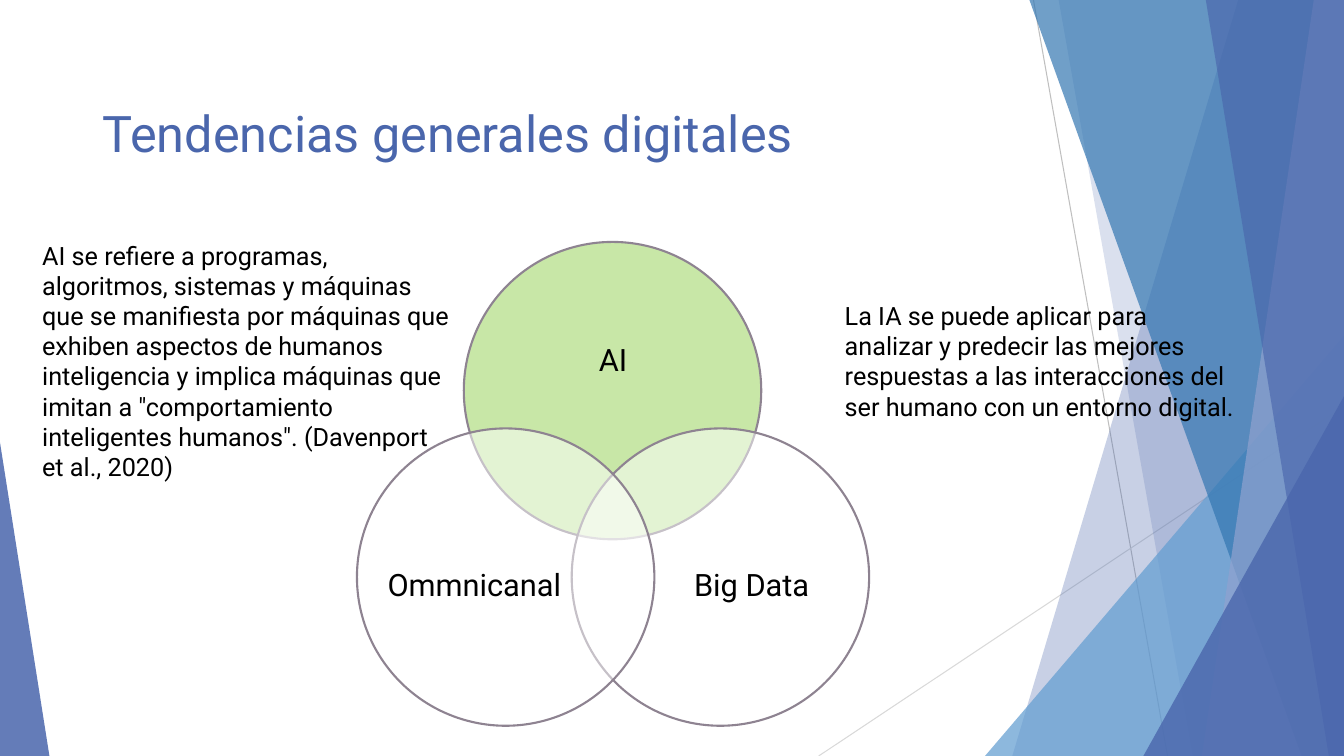
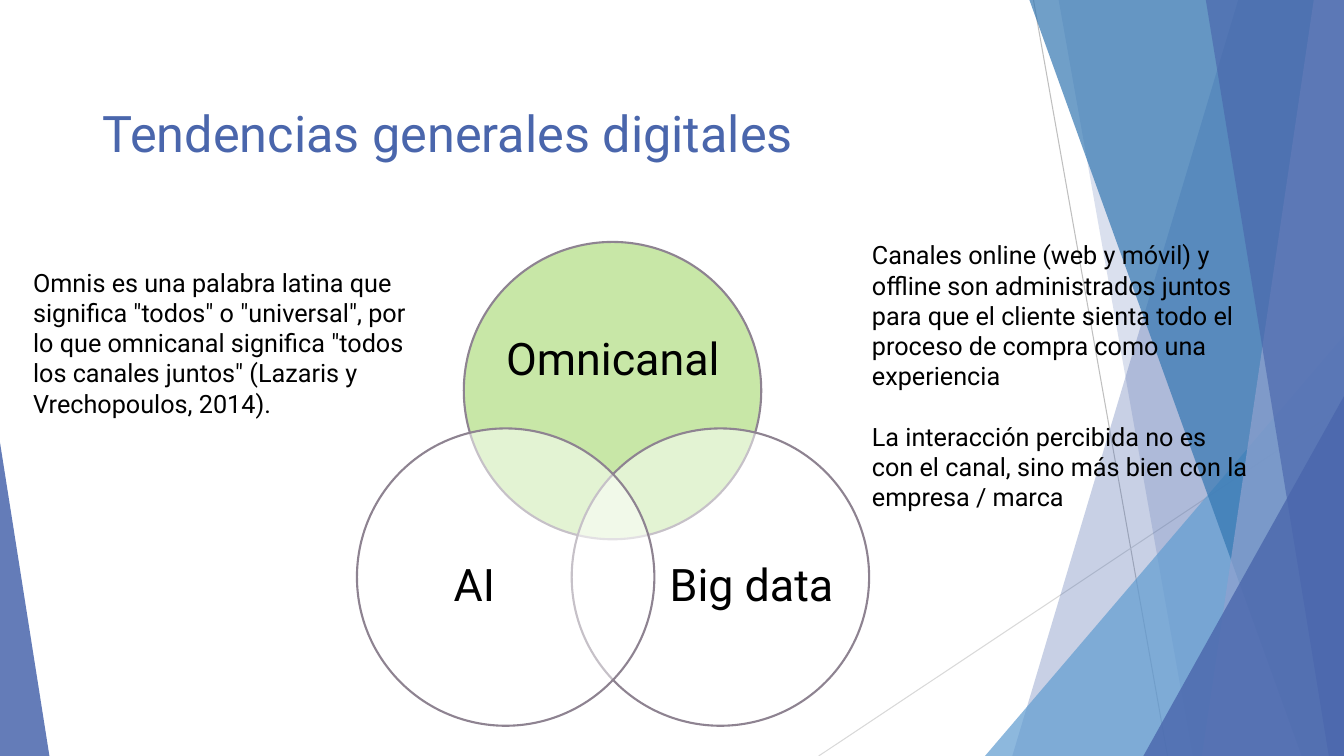
from pptx import Presentation
from pptx.dml.color import RGBColor
from pptx.enum.shapes import MSO_CONNECTOR, MSO_SHAPE
from pptx.enum.text import MSO_ANCHOR, PP_ALIGN
from pptx.oxml.ns import qn
from pptx.util import Inches, Pt
from lxml.etree import SubElement

WIDTH, HEIGHT = 13.33, 7.5
FONT = "Roboto"
TITLE = "Tendencias generales digitales"
BLACK = RGBColor(0x00, 0x00, 0x00)
WHITE = RGBColor(0xFF, 0xFF, 0xFF)
INDIGO = RGBColor(0x4A, 0x66, 0xAC)
SKY = RGBColor(0x62, 0x9D, 0xD1)
OCEAN = RGBColor(0x34, 0x77, 0xB2)
LAVENDER = RGBColor(0x90, 0xA2, 0xCF)
GREEN = RGBColor(0x92, 0xD0, 0x50)
MAUVE = RGBColor(0x8E, 0x83, 0x91)
GRAY = RGBColor(0xBF, 0xBF, 0xBF)
LIGHT_GRAY = RGBColor(0xD9, 0xD9, 0xD9)


class Deck:
    """Hold the shared style and the current slide."""

    def __init__(self):
        self.prs = Presentation()
        self.prs.slide_width = Inches(WIDTH)
        self.prs.slide_height = Inches(HEIGHT)
        self.s = None

    def add_slide(self):
        self.s = self.prs.slides.add_slide(self.prs.slide_layouts[6])
        self.backdrop()
        self.text(0.92, 0.96, 10.74, 1.45, [TITLE], 36, INDIGO)

    def paint(self, sp, color, opacity, outline=None):
        sp.shadow.inherit = False
        sp.fill.solid()
        sp.fill.fore_color.rgb = color
        clr = sp.fill._xPr.find(qn("a:solidFill"))[0]
        SubElement(clr, qn("a:alpha")).set("val", str(opacity * 1000))
        if outline is None:
            sp.line.fill.background()
        else:
            sp.line.color.rgb = outline
            sp.line.width = Pt(1.5)

    def line(self, x1, y1, x2, y2, color):
        ends = [Inches(v) for v in (x1, y1, x2, y2)]
        cxn = self.s.shapes.add_connector(MSO_CONNECTOR.STRAIGHT, *ends)
        cxn.line.color.rgb = color
        cxn.line.width = Pt(0.75)
        SubElement(cxn._element.spPr, qn("a:effectLst"))

    def band(self, top_x, bottom_x, color, opacity):
        points = [(top_x, 0), (WIDTH, 0), (WIDTH, HEIGHT), (bottom_x, HEIGHT)]
        points = [(Inches(x), Inches(y)) for x, y in points]
        builder = self.s.shapes.build_freeform(*points[0])
        builder.add_line_segments(points[1:], close=True)
        self.paint(builder.convert_to_shape(), color, opacity)

    def triangle(self, x, y, w, apex, color, opacity):
        sp = self.s.shapes.add_shape(
            MSO_SHAPE.ISOSCELES_TRIANGLE,
            Inches(x), Inches(y), Inches(w), Inches(HEIGHT - y))
        sp.adjustments[0] = apex
        self.paint(sp, color, opacity)

    def backdrop(self):
        self.line(10.25, 0, 11.58, HEIGHT, GRAY)
        self.line(WIDTH, 4.03, 8.12, HEIGHT, LIGHT_GRAY)
        self.band(12.28, 10.04, INDIGO, 30)
        self.band(10.5, 11.83, INDIGO, 20)
        self.triangle(9.77, 3.33, 3.56, 1, SKY, 72)
        self.band(10.21, 12.91, OCEAN, 70)
        self.band(13.03, 11.92, LAVENDER, 70)
        self.band(11.96, 13.18, INDIGO, 65)
        self.triangle(11.34, 3.93, 1.99, 1, INDIGO, 80)
        self.triangle(0, 4.39, 0.49, 0, INDIGO, 85)

    def text(self, x, y, w, h, paragraphs, size=18, color=BLACK):
        box = self.s.shapes.add_textbox(
            Inches(x), Inches(y), Inches(w), Inches(h))
        tf = box.text_frame
        tf.word_wrap = True
        for i, words in enumerate(paragraphs):
            p = tf.add_paragraph() if i else tf.paragraphs[0]
            if i:
                p.space_before = Pt(21.5)
            r = p.add_run()
            r.text = words
            r.font.name = FONT
            r.font.size = Pt(size)
            r.font.color.rgb = color
        return tf

    def label(self, x, y, w, h, words, size):
        tf = self.text(x, y, w, h, [words], size)
        tf.margin_left = tf.margin_right = 0
        tf.margin_top = tf.margin_bottom = 0
        tf.vertical_anchor = MSO_ANCHOR.MIDDLE
        p = tf.paragraphs[0]
        p.alignment = PP_ALIGN.CENTER
        p.line_spacing = 0.9

    def circle(self, x, y, color):
        d = Inches(2.95)
        sp = self.s.shapes.add_shape(
            MSO_SHAPE.OVAL, Inches(x), Inches(y), d, d)
        self.paint(sp, color, 50, MAUVE)

    def venn(self, top, right, left, size):
        self.circle(4.6, 2.4, GREEN)
        self.label(5, 2.92, 2.16, 1.33, top, size)
        for x, label_x, words in ((5.67, 6.57, right), (3.54, 3.82, left)):
            self.circle(x, 4.25, WHITE)
            self.label(label_x, 5.01, 1.77, 1.62, words, size)


def main():
    deck = Deck()

    deck.add_slide()
    deck.venn("AI", "Big Data", "Ommnicanal", 22)
    deck.text(8.28, 2.93, 4.06, 1.31, [
        "La IA se puede aplicar para analizar y predecir las mejores "
        "respuestas a las interacciones del ser humano con un entorno "
        "digital."])
    deck.text(0.32, 2.33, 4.24, 2.52, [
        "AI se refiere a programas, algoritmos, sistemas y máquinas que se "
        "manifiesta por máquinas que exhiben aspectos de humanos "
        "inteligencia y implica máquinas que imitan a \"comportamiento "
        "inteligentes humanos\". (Davenport et al., 2020)"])

    deck.add_slide()
    deck.venn("Omnicanal", "Big data", "AI", 32)
    deck.text(0.23, 2.6, 4.06, 1.31, [
        "Omnis es una palabra latina que significa \"todos\" o "
        "\"universal\", por lo que omnicanal significa \"todos los canales "
        "juntos\" (Lazaris y Vrechopoulos, 2014)."])
    deck.text(8.55, 2.33, 3.96, 2.83, [
        "Canales online (web y móvil) y offline son administrados juntos "
        "para que el cliente sienta todo el proceso de compra como una "
        "experiencia",
        "La interacción percibida no es con el canal, sino más bien con la "
        "empresa / marca"])

    deck.prs.save("out.pptx")


if __name__ == "__main__":
    main()
